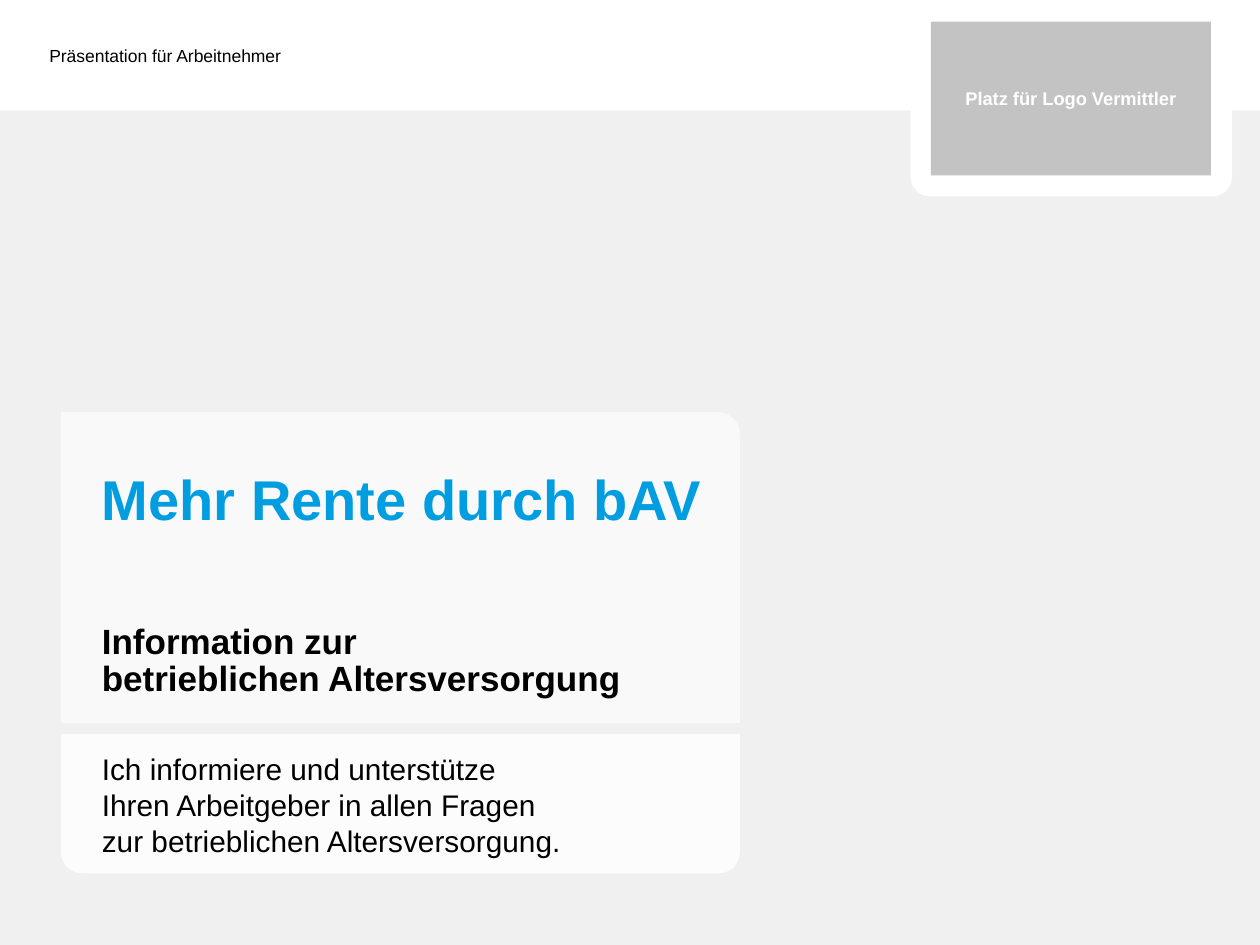
from lxml.etree import SubElement
from pptx import Presentation
from pptx.dml.color import RGBColor
from pptx.enum.shapes import MSO_SHAPE
from pptx.enum.text import MSO_ANCHOR, MSO_AUTO_SIZE, PP_ALIGN
from pptx.oxml.ns import qn
from pptx.util import Pt

COLORS = {"white": "FFFFFF", "pale": "F0F0F0", "gray": "C3C3C3",
          "blue": "009EE0", "black": "000000"}


def add_block(kind, left, top, width, height, color, alpha=100, adjust=()):
    """Add a borderless filled shape; alpha is its opacity in percent."""
    block = slide.shapes.add_shape(kind, Pt(left), Pt(top), Pt(width), Pt(height))
    block.shadow.inherit = False
    block.line.fill.background()
    block.fill.solid()
    block.fill.fore_color.rgb = RGBColor.from_string(COLORS[color])
    for i, value in enumerate(adjust):
        block.adjustments[i] = value
    if alpha < 100:
        tint = block.fill._xPr.find(".//" + qn("a:srgbClr"))
        SubElement(tint, qn("a:alpha"), val=str(alpha * 1000))
    return block


def set_text(shape, text, size, color, bold=False, anchor=MSO_ANCHOR.MIDDLE,
             align=PP_ALIGN.LEFT, inset=0):
    frame = shape.text_frame
    frame.text = text
    frame.word_wrap = True
    frame.auto_size = MSO_AUTO_SIZE.NONE
    frame.vertical_anchor = anchor
    frame.margin_left = Pt(inset)
    frame.margin_top = frame.margin_right = frame.margin_bottom = 0
    line = frame.paragraphs[0]
    line.alignment = align
    line.space_before = Pt(0)
    line.font.name = "Arial"
    line.font.size = Pt(size)
    line.font.bold = bold
    line.font.color.rgb = RGBColor.from_string(COLORS[color])
    return line


deck = Presentation()
deck.slide_width, deck.slide_height = Pt(720), Pt(540)
# The comparison layout offers a title and two plain text bodies
slide = deck.slides.add_slide(deck.slide_layouts[4])
holders = {h.placeholder_format.idx: h for h in slide.placeholders}

# Backdrop and header
add_block(MSO_SHAPE.RECTANGLE, 0, 63.2, 720, 476.8, "pale")
header = slide.shapes.add_textbox(0, 0, Pt(360), Pt(63.2))
set_text(header, "Präsentation für Arbeitnehmer", 10, "black", inset=28.2)

# Translucent cards
add_block(MSO_SHAPE.ROUND_1_RECTANGLE, 34.8, 235.5, 388, 177.7, "white", 60, [0.07])
lower = add_block(MSO_SHAPE.ROUND_2_SAME_RECTANGLE, 34.8, 419.3, 388, 79.7,
                  "white", 85, [0.15, 0])
lower.rotation = 180

# Placeholders, brought in front of the cards
for idx, top, width, height in [(0, 265.7, 343.5, 78.5), (1, 427.7, 379.5, 64),
                                (3, 343.5, 496, 69)]:
    holder = holders.pop(idx)
    holder.left, holder.top = Pt(58.2), Pt(top)
    holder.width, holder.height = Pt(width), Pt(height)
    slide.shapes._spTree.append(holder._element)
    if idx == 0:
        set_text(holder, "Mehr Rente durch bAV", 32, "blue", True, MSO_ANCHOR.TOP)
    elif idx == 1:
        line = set_text(holder, "Ich informiere und unterstütze\v"
                        "Ihren Arbeitgeber in allen Fragen\v"
                        "zur betrieblichen Altersversorgung.", 17, "black")
        line.space_after = Pt(12)
    else:
        line = set_text(holder, "Information zur\vbetrieblichen Altersversorgung",
                        20, "black", True)
        line.line_spacing = Pt(21)
        line.space_after = Pt(12)
for spare in holders.values():
    spare._element.getparent().remove(spare._element)

# Logo area
badge = slide.shapes.add_group_shape()
frame = add_block(MSO_SHAPE.ROUNDED_RECTANGLE, 520.3, 0, 183.7, 112.3, "white",
                  adjust=[0.1])
field = add_block(MSO_SHAPE.RECTANGLE, 532, 12.4, 160, 87.8, "gray")
set_text(field, "Platz für Logo Vermittler", 10.5, "white", True,
         align=PP_ALIGN.CENTER)
for part in (frame, field):
    badge._element.append(part._element)
box = badge._element.grpSpPr.get_or_add_xfrm()
for tag, names, values in [("off", "xy", (frame.left, frame.top)),
                           ("ext", ("cx", "cy"), (frame.width, frame.height)),
                           ("chOff", "xy", (frame.left, frame.top)),
                           ("chExt", ("cx", "cy"), (frame.width, frame.height))]:
    for old in box.findall(qn("a:" + tag)):
        box.remove(old)
    SubElement(box, qn("a:" + tag), dict(zip(names, map(str, values))))

deck.save("out.pptx")
